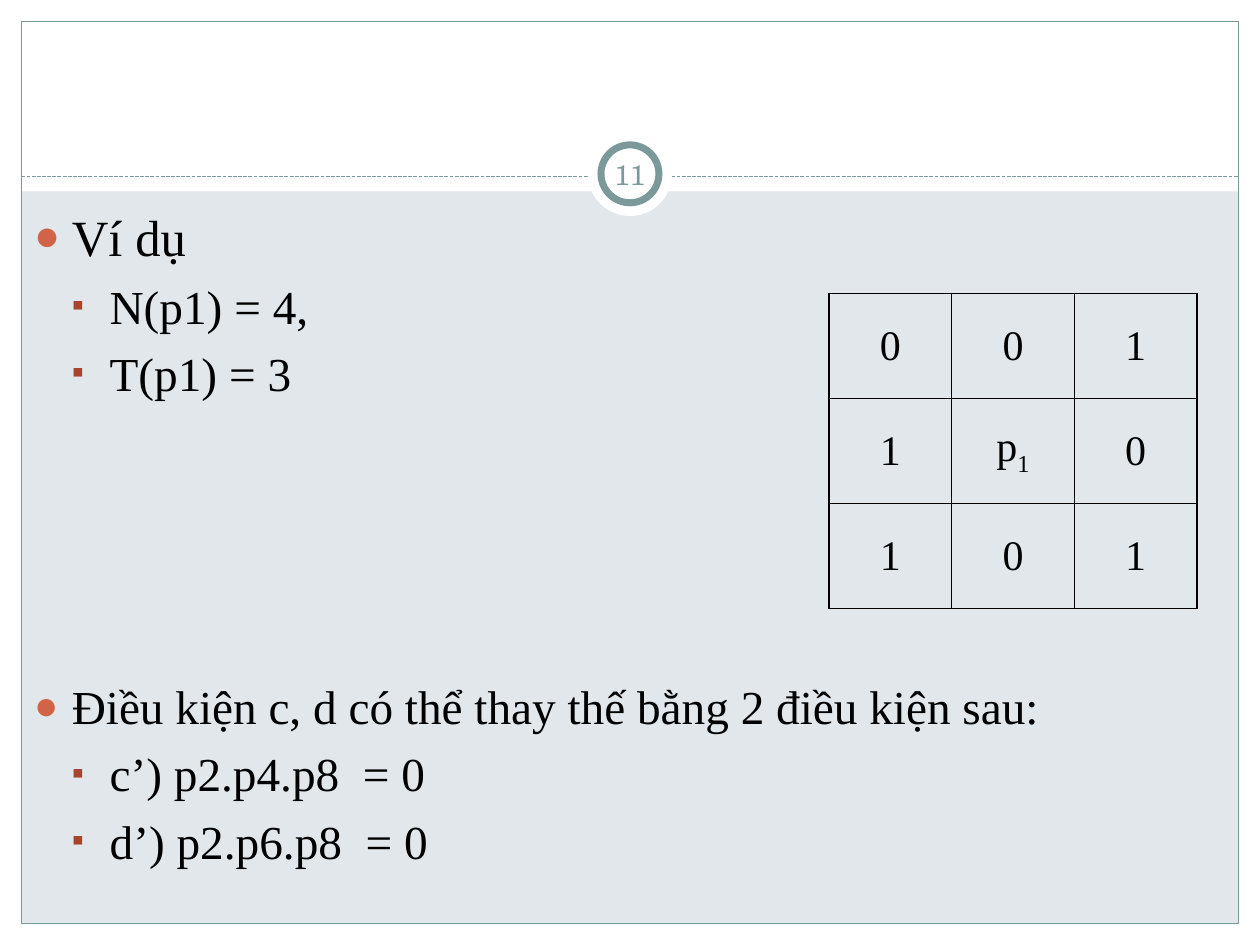
from lxml.etree import SubElement
from pptx import Presentation
from pptx.dml.color import RGBColor
from pptx.enum.dml import MSO_LINE_DASH_STYLE as Dash
from pptx.enum.shapes import MSO_CONNECTOR as Connector, MSO_SHAPE as Shape
from pptx.enum.text import MSO_ANCHOR as Anchor, MSO_AUTO_SIZE as AutoSize, PP_ALIGN as Align
from pptx.oxml.ns import qn
from pptx.util import Inches, Pt

WHITE = RGBColor(0xFF, 0xFF, 0xFF)
BLACK = RGBColor(0, 0, 0)
PALE = RGBColor(0xE1, 0xE7, 0xEA)
TEAL = RGBColor(0x7C, 0x99, 0x9A)
ORANGE = RGBColor(0xD1, 0x63, 0x49)
RED = RGBColor(0xA9, 0x43, 0x2B)

SERIF = "Times New Roman"
WIDTH, HEIGHT, MARGIN = 10, 7.5, 0.17
HEADER, RULE_Y = 1.52, 1.4
BADGE_X, BADGE_Y = WIDTH / 2, 1.38
INDENT = 0.3

PAGE_NUMBER = "11"
BULLETS = [("●", ORANGE, 85), ("▪", RED, 73)]
POINTS = [
    (0, "Ví dụ", 29, 6),
    (1, "N(p1) = 4,", 27, 6),
    (1, "T(p1) = 3", 27, 6),
    (0, "Điều kiện c, d có thể thay thế bằng 2 điều kiện sau:", 27, 158),
    (1, "c’) p2.p4.p8  = 0", 27, 6),
    (1, "d’) p2.p6.p8  = 0", 27, 6),
]
NEIGHBOURS = [
    [("0",), ("0",), ("1",)],
    [("1",), ("p", "1"), ("0",)],
    [("1",), ("0",), ("1",)],
]
GRID_BOX = (6.58, 2.33, 2.92, 2.5)


def inches(*lengths):
    return [Inches(length) for length in lengths]


def style(font, size, color, name=SERIF):
    font.size, font.name = Pt(size), name
    font.color.rgb = color


def add_plain(shapes, preset, box, fill=None, line=None, weight=0.75):
    plain = shapes.add_shape(preset, *inches(*box))
    plain.shadow.inherit = False
    if fill is None:
        plain.fill.background()
    else:
        plain.fill.solid()
        plain.fill.fore_color.rgb = fill
    if line is None:
        plain.line.fill.background()
    else:
        plain.line.color.rgb = line
        plain.line.width = Pt(weight)


def centred(size):
    return BADGE_X - size / 2, BADGE_Y - size / 2, size, size


def add_frame(shapes):
    for band in [
        (0, HEIGHT - MARGIN, WIDTH, MARGIN),
        (0, 0, WIDTH, HEADER),
        (0, 0, MARGIN, HEIGHT),
        (WIDTH - MARGIN, 0, MARGIN, HEIGHT),
    ]:
        add_plain(shapes, Shape.RECTANGLE, band, WHITE)
    border = (MARGIN, MARGIN, WIDTH - 2 * MARGIN, HEIGHT - 2 * MARGIN)
    add_plain(shapes, Shape.RECTANGLE, border, line=TEAL)
    rule = shapes.add_connector(
        Connector.STRAIGHT, *inches(MARGIN, RULE_Y, WIDTH - MARGIN, RULE_Y))
    rule.line.color.rgb = TEAL
    rule.line.width = Pt(0.75)
    rule.line.dash_style = Dash.SQUARE_DOT
    SubElement(rule.element.spPr, qn("a:effectLst"))


def add_badge(shapes):
    add_plain(shapes, Shape.OVAL, centred(0.67), WHITE)
    add_plain(shapes, Shape.OVAL, centred(0.46), WHITE, TEAL, 4)
    number = shapes.add_textbox(*inches(*centred(0.5))).text_frame
    number.word_wrap = True
    number.vertical_anchor = Anchor.MIDDLE
    number.margin_left = number.margin_right = Inches(0.05)
    number.text = PAGE_NUMBER
    number.paragraphs[0].alignment = Align.CENTER
    style(number.paragraphs[0].font, 16, TEAL, "TeX Gyre Schola")


def set_bullet(paragraph, level):
    symbol, color, percent = BULLETS[level]
    properties = paragraph._p.get_or_add_pPr()
    properties.set("marL", str(Inches(INDENT * (level + 1))))
    properties.set("indent", str(-Inches(INDENT)))
    SubElement(SubElement(properties, qn("a:buClr")), qn("a:srgbClr"), val=str(color))
    SubElement(properties, qn("a:buSzPct"), val=str(percent * 1000))
    SubElement(properties, qn("a:buFont"), typeface=SERIF)
    SubElement(properties, qn("a:buChar"), char=symbol)


def fill_body(body):
    body.left, body.top, body.width, body.height = inches(MARGIN, 1.58, WIDTH - 2 * MARGIN, 5.75)
    frame = body.text_frame
    frame.auto_size = AutoSize.NONE
    for index, (level, text, size, gap) in enumerate(POINTS):
        paragraph = frame.add_paragraph() if index else frame.paragraphs[0]
        paragraph.text = text
        paragraph.level = level
        paragraph.space_before = Pt(gap)
        set_bullet(paragraph, level)
        style(paragraph.font, size, BLACK)


def set_borders(cell):
    properties = cell._tc.get_or_add_tcPr()
    for position, side in enumerate(("lnL", "lnR", "lnT", "lnB")):
        edge = properties.makeelement(qn(f"a:{side}"), {"w": str(Pt(1))})
        properties.insert(position, edge)
        SubElement(SubElement(edge, qn("a:solidFill")), qn("a:srgbClr"), val=str(BLACK))


def add_neighbours(shapes):
    grid = shapes.add_table(len(NEIGHBOURS), len(NEIGHBOURS[0]), *inches(*GRID_BOX)).table
    grid.first_row = grid.horz_banding = False
    for row, values in enumerate(NEIGHBOURS):
        for column, parts in enumerate(values):
            cell = grid.cell(row, column)
            cell.fill.background()
            cell.vertical_anchor = Anchor.MIDDLE
            set_borders(cell)
            paragraph = cell.text_frame.paragraphs[0]
            paragraph.alignment = Align.CENTER
            style(paragraph.font, 24, BLACK)
            for position, part in enumerate(parts):
                run = paragraph.add_run()
                run.text = part
                if position:
                    run._r.get_or_add_rPr().set("baseline", "-25000")


def main():
    deck = Presentation()
    deck.slide_width, deck.slide_height = inches(WIDTH, HEIGHT)
    slide = deck.slides.add_slide(deck.slide_layouts[1])
    slide.background.fill.solid()
    slide.background.fill.fore_color.rgb = PALE
    title = slide.shapes.title.element
    title.getparent().remove(title)
    add_frame(slide.shapes)
    add_badge(slide.shapes)
    fill_body(slide.placeholders[1])
    add_neighbours(slide.shapes)
    deck.save("out.pptx")


if __name__ == "__main__":
    main()
